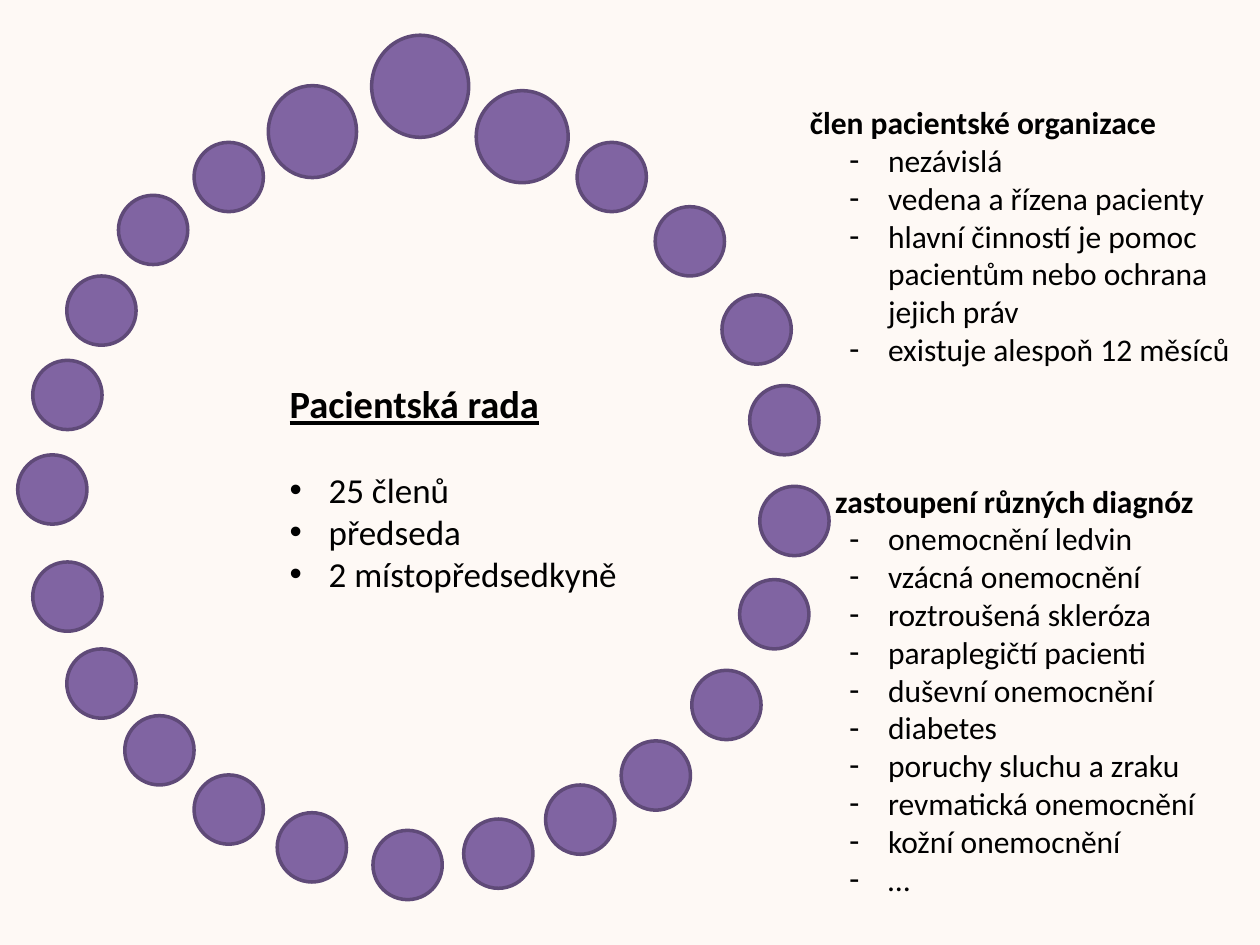
from lxml.etree import SubElement
from pptx import Presentation
from pptx.dml.color import RGBColor
from pptx.enum.shapes import MSO_SHAPE
from pptx.enum.text import MSO_AUTO_SIZE
from pptx.oxml.ns import qn
from pptx.util import Inches, Pt

COLORS = {
    "background": "FEF9F5",
    "member": "8064A2",
    "member_edge": "5F4A78",
    "text": "000000",
}
FONT = "Calibri"

MEMBER_SIZE = 0.55
# Left and top of each ordinary member, clockwise from the upper right
MEMBERS = [
    (4.58, 1.13), (5.2, 1.64), (5.73, 2.34), (5.95, 3.06), (6.03, 3.86),
    (5.87, 4.6), (5.49, 5.32), (4.93, 5.88), (4.33, 6.23), (3.68, 6.5),
    (2.96, 6.59), (2.2, 6.45), (1.54, 6.15), (0.99, 5.68), (0.53, 5.15),
    (0.26, 4.46), (0.14, 3.61), (0.26, 2.86), (0.53, 2.19), (0.94, 1.55),
    (1.54, 1.13),
]
# Left, top, width and height of the chair and the two vice-chairs
LEADERS = [(2.13, 0.68, 0.7, 0.73), (2.95, 0.28, 0.77, 0.81), (3.78, 0.72, 0.73, 0.73)]

COUNCIL_FACTS = ["25 členů", "předseda", "2 místopředsedkyně"]
ORGANIZATION_CRITERIA = [
    "nezávislá",
    "vedena a řízena pacienty",
    "hlavní činností je pomoc pacientům nebo ochrana jejich práv",
    "existuje alespoň 12 měsíců",
]
DIAGNOSES = [
    "onemocnění ledvin",
    "vzácná onemocnění",
    "roztroušená skleróza",
    "paraplegičtí pacienti",
    "duševní onemocnění",
    "diabetes",
    "poruchy sluchu a zraku",
    "revmatická onemocnění",
    "kožní onemocnění",
    "…",
]


def color(name):
    return RGBColor.from_string(COLORS[name])


def add_circle(page, left, top, width=MEMBER_SIZE, height=MEMBER_SIZE):
    circle = page.shapes.add_shape(
        MSO_SHAPE.OVAL, Inches(left), Inches(top), Inches(width), Inches(height))
    circle.shadow.inherit = False
    circle.fill.solid()
    circle.fill.fore_color.rgb = color("member")
    circle.line.color.rgb = color("member_edge")
    circle.line.width = Pt(2)


def add_text_box(page, left, top, width, height):
    box = page.shapes.add_textbox(Inches(left), Inches(top), Inches(width), Inches(height))
    box.text_frame.word_wrap = True
    box.text_frame.auto_size = MSO_AUTO_SIZE.SHAPE_TO_FIT_TEXT
    return box.text_frame


def add_paragraph(frame, text, size, margin=0, indent=0, level=0, bullet=None,
                  bold=False, underline=False, space_before=0):
    """Fill the frame's first paragraph if it is empty, otherwise append one."""
    first = frame.paragraphs[0]
    para = frame.add_paragraph() if first.runs else first
    para.level = level
    properties = para._p.get_or_add_pPr()
    properties.set("marL", str(Inches(margin)))
    properties.set("indent", str(Inches(indent)))
    if bullet:
        SubElement(properties, qn("a:buFont")).set("typeface", "Arial")
        SubElement(properties, qn("a:buChar")).set("char", bullet)
    if space_before:
        para.space_before = Pt(space_before)
    span = para.add_run()
    span.text = text
    span.font.name = FONT
    span.font.size = Pt(size)
    span.font.bold = bold
    span.font.underline = underline
    span.font.color.rgb = color("text")


def add_list(frame, items, size, margin, bullet, level=0, gap=0):
    """Add hanging bullets, with a gap above the first one."""
    for index, item in enumerate(items):
        add_paragraph(frame, item, size, margin, -0.31, level, bullet,
                      space_before=0 if index else gap)


def add_council_text(page):
    frame = add_text_box(page, 2.2, 2.97, 2.91, 1.82)
    add_paragraph(frame, "Pacientská rada", 22, bold=True, underline=True)
    add_list(frame, COUNCIL_FACTS, 20, 0.31, "•", gap=24)


def add_membership_text(page):
    frame = add_text_box(page, 6.14, 0.77, 4.04, 6.77)
    add_paragraph(frame, "člen pacientské organizace", 18, indent=0.19, bold=True)
    add_list(frame, ORGANIZATION_CRITERIA, 18, 0.81, "-", level=1)
    add_paragraph(frame, "zastoupení různých diagnóz", 18, 0.5, -0.11, level=1,
                  bold=True, space_before=65)
    add_list(frame, DIAGNOSES, 18, 0.81, "-", level=1)


def main():
    deck = Presentation()
    deck.slide_width, deck.slide_height = Inches(10), Inches(7.5)
    page = deck.slides.add_slide(deck.slide_layouts[6])
    page.background.fill.solid()
    page.background.fill.fore_color.rgb = color("background")
    for place in MEMBERS + LEADERS:
        add_circle(page, *place)
    add_council_text(page)
    add_membership_text(page)
    deck.save("out.pptx")


if __name__ == "__main__":
    main()
